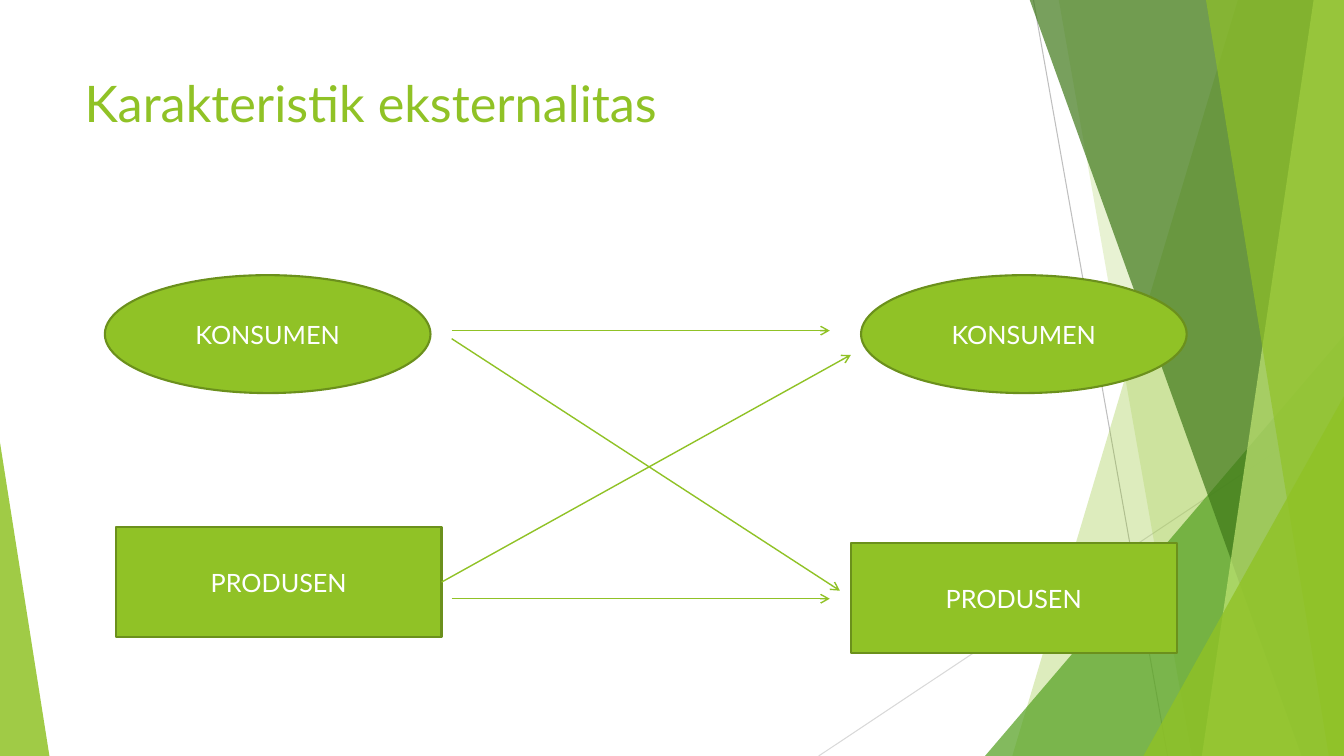
"""Build the slide on the characteristics of externalities."""
from pptx import Presentation
from pptx.dml.color import RGBColor
from pptx.enum.shapes import MSO_CONNECTOR, MSO_SHAPE
from pptx.enum.text import MSO_ANCHOR, PP_ALIGN
from pptx.oxml.ns import qn
from pptx.util import Inches, Pt
from lxml.etree import SubElement

GREEN, DARK, WHITE = "90C226", "6B901C", "FFFFFF"
FONT = "Lato"
WIDTH, HEIGHT = 13.33, 7.5


def rgb(color):
    return RGBColor.from_string(color)


def add_line(s, start, end, color, width, arrow=False):
    line = s.shapes.add_connector(MSO_CONNECTOR.STRAIGHT, *map(Inches, start + end))
    line.line.color.rgb = rgb(color)
    line.line.width = Pt(width)
    if arrow:
        SubElement(line.line._get_or_add_ln(), qn("a:tailEnd"), type="arrow")
    SubElement(line._element.spPr, qn("a:effectLst"))
    return line


prs = Presentation()
prs.slide_width, prs.slide_height = Inches(WIDTH), Inches(HEIGHT)
s = prs.slides.add_slide(prs.slide_layouts[6])
s.background.fill.solid()
s.background.fill.fore_color.rgb = rgb(WHITE)

add_line(s, (10.25, 0), (11.58, HEIGHT), "BFBFBF", 0.75)
add_line(s, (WIDTH, 4.03), (8.12, HEIGHT), "D9D9D9", 0.75)

# Bands give top and bottom x of the left edge; triangles give left, top, width, apex.
facets = [
    ("band", (12.28, 10.04), GREEN, 30),
    ("band", (10.5, 11.82), GREEN, 20),
    ("triangle", (9.77, 3.33, 3.56, 1), "54A021", 72),
    ("band", (10.21, 12.91), "3F7819", 70),
    ("band", (13.03, 11.92), "C0E474", 70),
    ("band", (11.96, 13.18), GREEN, 65),
    ("triangle", (11.34, 3.93, 1.99, 1), GREEN, 80),
    ("triangle", (0, 4.39, 0.49, 0), GREEN, 85),
]
for kind, geometry, color, alpha in facets:
    if kind == "band":
        top_x, bottom_x = geometry
        outline = s.shapes.build_freeform(Inches(top_x), Inches(-0.01))
        corners = [(WIDTH, -0.01), (WIDTH, HEIGHT), (bottom_x, HEIGHT)]
        outline.add_line_segments([(Inches(x), Inches(y)) for x, y in corners])
        sp = outline.convert_to_shape()
    else:
        left, top, width, apex = geometry
        sp = s.shapes.add_shape(MSO_SHAPE.ISOSCELES_TRIANGLE, Inches(left), Inches(top),
                                Inches(width), Inches(HEIGHT - top))
        sp.adjustments[0] = apex
    sp.shadow.inherit = False
    sp.fill.solid()
    sp.fill.fore_color.rgb = rgb(color)
    srgb = sp._element.spPr.find(qn("a:solidFill")).find(qn("a:srgbClr"))
    SubElement(srgb, qn("a:alpha"), val=str(alpha * 1000))
    sp.line.fill.background()

title = s.shapes.add_textbox(Inches(0.74), Inches(0.67), Inches(9.4), Inches(1.44))
tf = title.text_frame
tf.word_wrap = True
p = tf.paragraphs[0]
p.text = "Karakteristik eksternalitas"
p.font.name, p.font.size = FONT, Pt(36)
p.font.color.rgb = rgb(GREEN)

actors = {}
for name, side, preset, left, top, height in [
    ("KONSUMEN", "left", MSO_SHAPE.OVAL, 1.04, 2.73, 1.17),
    ("KONSUMEN", "right", MSO_SHAPE.OVAL, 8.54, 2.73, 1.17),
    ("PRODUSEN", "left", MSO_SHAPE.RECTANGLE, 1.15, 5.23, 1.09),
    ("PRODUSEN", "right", MSO_SHAPE.RECTANGLE, 8.44, 5.39, 1.09),
]:
    sp = s.shapes.add_shape(preset, Inches(left), Inches(top), Inches(3.23), Inches(height))
    sp.shadow.inherit = False
    sp.fill.solid()
    sp.fill.fore_color.rgb = rgb(GREEN)
    sp.line.color.rgb = rgb(DARK)
    sp.line.width = Pt(1.5)
    tf = sp.text_frame
    tf.word_wrap = True
    tf.vertical_anchor = MSO_ANCHOR.MIDDLE
    p = tf.paragraphs[0]
    p.text = name
    p.alignment = PP_ALIGN.CENTER
    p.font.name, p.font.size = FONT, Pt(18)
    p.font.color.rgb = rgb(WHITE)
    actors[name, side] = sp

add_line(s, (4.48, 3.28), (8.23, 3.28), GREEN, 1, arrow=True)
add_line(s, (4.48, 3.36), (8.33, 5.86), GREEN, 1, arrow=True)
rising = add_line(s, (4.38, 5.78), (8.44, 3.52), GREEN, 1, arrow=True)
rising.begin_connect(actors["PRODUSEN", "left"], 3)
add_line(s, (4.48, 5.94), (8.23, 5.94), GREEN, 1, arrow=True)

prs.save("out.pptx")
